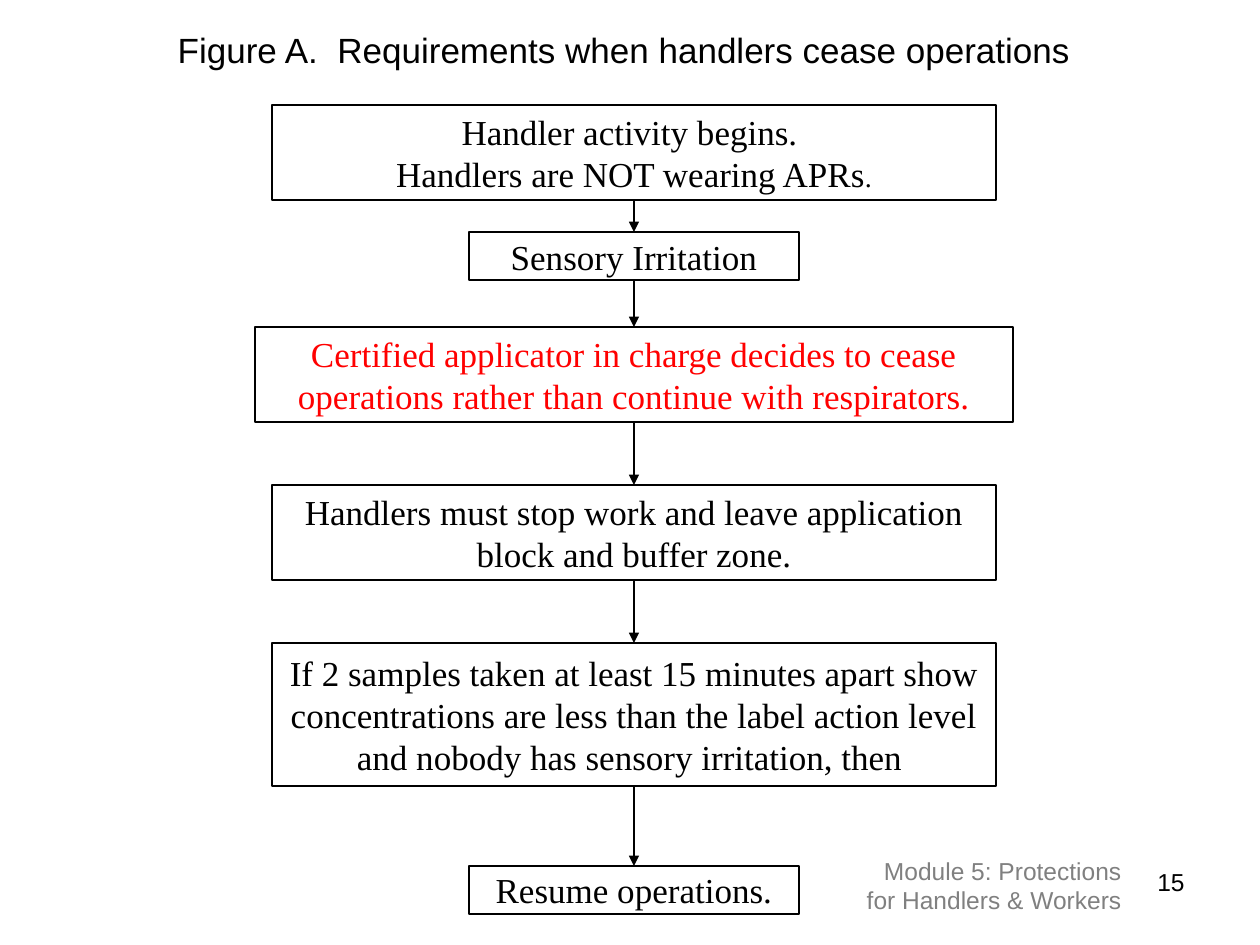
import pptx
import pptx.util
import pptx.dml.color
import pptx.enum.shapes
import pptx.enum.text
import pptx.oxml.ns
from lxml import etree

BLACK = pptx.dml.color.RGBColor(0, 0, 0)
WHITE = pptx.dml.color.RGBColor(255, 255, 255)
RED = pptx.dml.color.RGBColor(255, 0, 0)
GRAY = pptx.dml.color.RGBColor(128, 128, 128)

PIXEL = 914400 // 126
CENTER = 634
WIDE, NARROW, EXTRA_WIDE = 724, 330, 758
TOP, BOTTOM = 0, 2

TITLE = [("Figure A.  Requirements when handlers cease operations", 20), (" ", 18)]
STEPS = [
    (105, WIDE, 95, BLACK, [[("Handler activity begins. ", 20)],
                            [("Handlers are NOT wearing APRs", 20), (".", 16)]]),
    (232, NARROW, 48, BLACK, [[("Sensory Irritation", 20)]]),
    (327, EXTRA_WIDE, 95, RED, [[("Certified applicator in charge decides to cease "
                                  "operations rather than continue with respirators.", 20)]]),
    (485, WIDE, 95, BLACK, [[("Handlers must stop work and leave application "
                              "block and buffer zone.", 20)]]),
    (643, WIDE, 143, BLACK, [[("If 2 samples taken at least 15 minutes apart show "
                               "concentrations are less than the label action level "
                               "and nobody has sensory irritation, then ", 20)]]),
    (866, NARROW, 48, BLACK, [[("Resume operations.", 20)]]),
]
FOOTERS = [
    ((903, 861, 294, 66), "15", BLACK),
    ((840, 850, 294, 66), "Module 5: Protections for Handlers & Workers", GRAY),
]


def px(*lengths):
    return [length * PIXEL for length in lengths]


def write(shape, paragraphs, font, color, alignment, anchor, inset, line_spacing=None):
    frame = shape.text_frame
    frame.word_wrap = True
    frame.auto_size = pptx.enum.text.MSO_AUTO_SIZE.NONE
    frame.vertical_anchor = anchor
    frame.margin_top = frame.margin_bottom = inset * PIXEL
    for index, runs in enumerate(paragraphs):
        paragraph = frame.add_paragraph() if index else frame.paragraphs[0]
        paragraph.alignment = alignment
        paragraph.line_spacing = line_spacing
        paragraph.font.name = font
        paragraph.font.color.rgb = color
        paragraph.font.size = pptx.util.Pt(runs[0][1])
        for text, size in runs:
            run = paragraph.add_run()
            run.text = text
            if size != runs[0][1]:
                run.font.size = pptx.util.Pt(size)


def add_step(slide, top, width, height, color, paragraphs):
    shape = slide.shapes.add_shape(
        pptx.enum.shapes.MSO_SHAPE.FLOWCHART_PROCESS,
        *px(CENTER - width // 2, top, width, height))
    shape.shadow.inherit = False
    shape.fill.solid()
    shape.fill.fore_color.rgb = WHITE
    shape.line.color.rgb = BLACK
    shape.line.width = pptx.util.Pt(0.75)
    write(shape, paragraphs, "Times New Roman", color,
          pptx.enum.text.PP_ALIGN.CENTER, pptx.enum.text.MSO_ANCHOR.MIDDLE, 2,
          pptx.util.Pt(24))
    return shape


def add_arrow(slide, upper, lower):
    connector = slide.shapes.add_connector(
        pptx.enum.shapes.MSO_CONNECTOR.STRAIGHT, 0, 0, 0, 0)
    connector.begin_connect(upper, BOTTOM)
    connector.end_connect(lower, TOP)
    connector.line.color.rgb = BLACK
    connector.line.width = pptx.util.Pt(0.75)
    qn = pptx.oxml.ns.qn
    etree.SubElement(connector.line._get_or_add_ln(), qn("a:tailEnd"), type="triangle")
    etree.SubElement(connector._element.spPr, qn("a:effectLst"))


def main():
    presentation = pptx.Presentation()
    presentation.slide_width, presentation.slide_height = px(1260, 945)
    slide = presentation.slides.add_slide(presentation.slide_layouts[5])

    title = slide.shapes.title
    title.left, title.top, title.width, title.height = px(60, 22, 1137, 54)
    write(title, [TITLE], "Arial", BLACK, pptx.enum.text.PP_ALIGN.CENTER,
          pptx.enum.text.MSO_ANCHOR.MIDDLE, 6)

    for box, text, color in FOOTERS:
        footer = slide.shapes.add_textbox(*px(*box))
        write(footer, [[(text, 14)]], "Arial", color, pptx.enum.text.PP_ALIGN.RIGHT,
              pptx.enum.text.MSO_ANCHOR.TOP, 6)

    steps = [add_step(slide, *step) for step in STEPS]
    for upper, lower in zip(steps, steps[1:]):
        add_arrow(slide, upper, lower)

    presentation.save("out.pptx")


if __name__ == "__main__":
    main()
